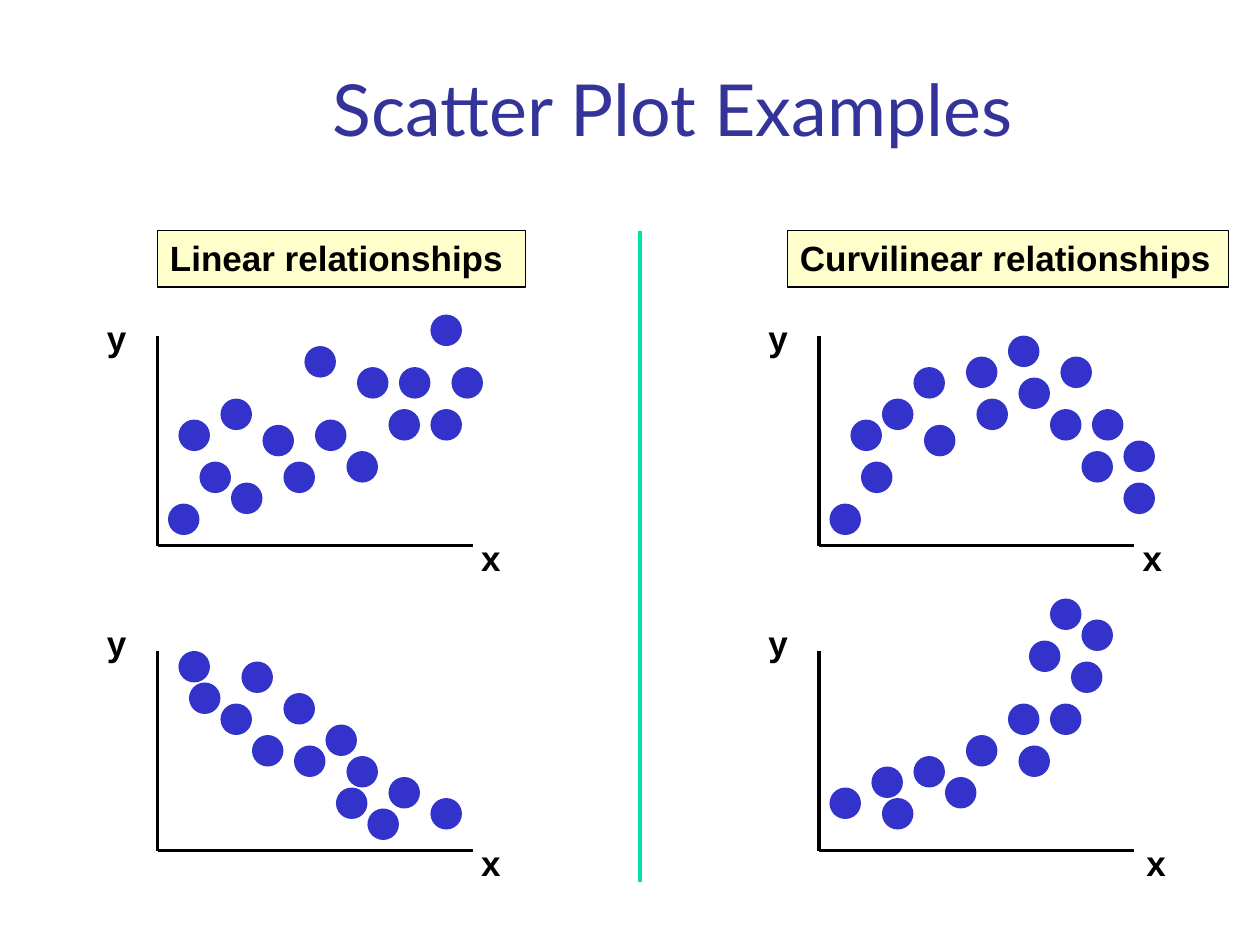
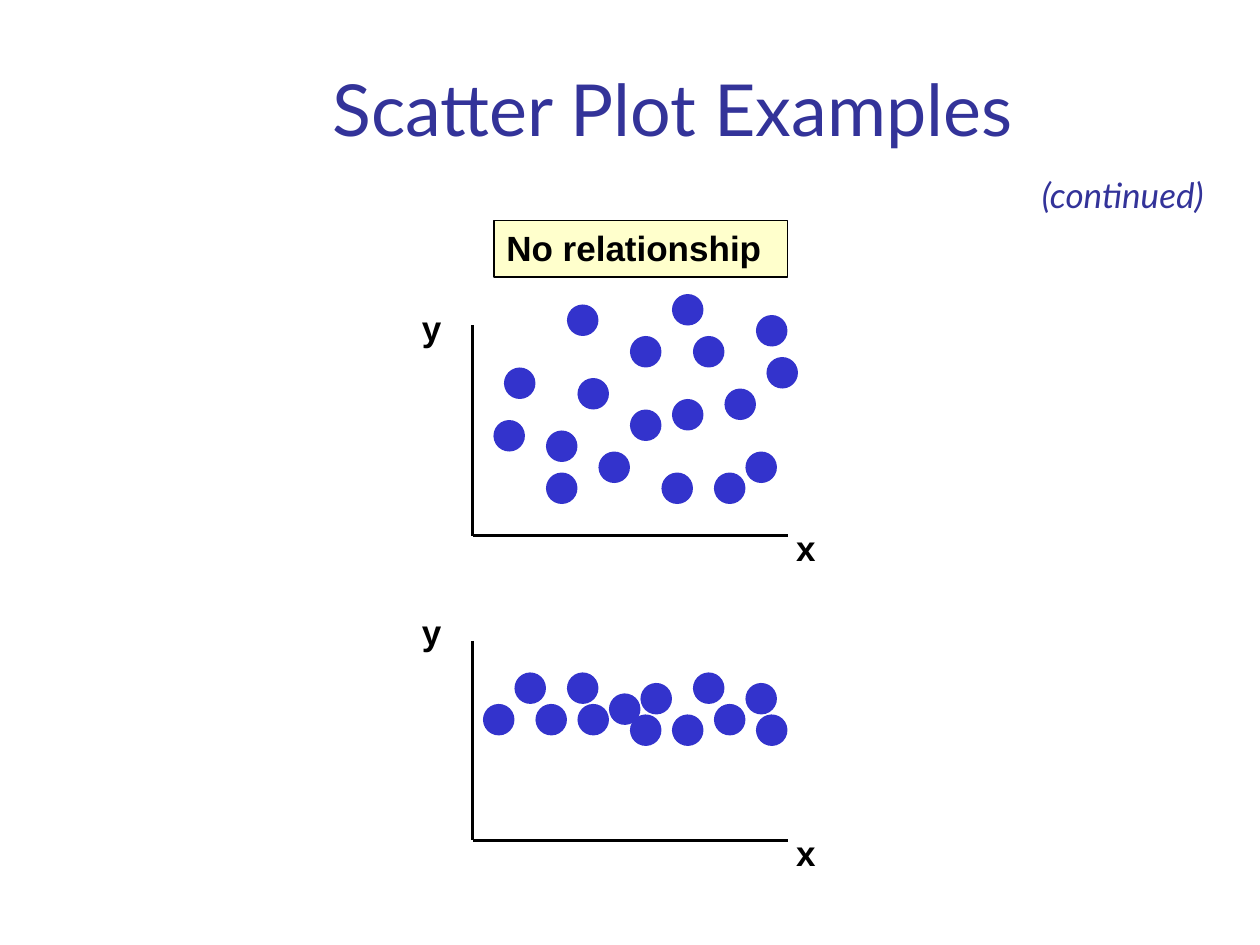
from dataclasses import dataclass

from lxml import etree
from pptx import Presentation
from pptx.dml.color import RGBColor
from pptx.enum import shapes, text
from pptx.oxml import ns
from pptx.util import Inches, Pt

# Shared colours, fonts and measures (inches)
NAVY = RGBColor(0x33, 0x33, 0x99)
DOT_BLUE = RGBColor(0x33, 0x33, 0xCC)
CREAM = RGBColor(0xFF, 0xFF, 0xCC)
GREEN = RGBColor(0x00, 0xE4, 0xA8)
BLACK = RGBColor(0, 0, 0)
HEADING_FONT = "Lato"
LABEL_FONT = "Arial"
GRID = 1 / 12
DOT_SIZE = 0.25
X_AXIS_LENGTH = 2.5
LABEL_HEIGHT = 0.43


@dataclass
class Plot:
    """Axes meet at (left, bottom); dots are grid steps right of and above it."""
    left: float
    bottom: float
    y_steps: int
    dots: list[tuple[float, float]]
    x_label_offset: float = 2.47


@dataclass
class Heading:
    caption: str
    left: float
    top: float
    width: float


def style_text(frame, font_name: str, size: float, color: RGBColor,
               bold: bool = False, italic: bool = False) -> None:
    for run in frame.paragraphs[0].runs:
        font = run.font
        font.name, font.size = font_name, Pt(size)
        font.bold, font.italic = bold, italic
        font.color.rgb = color


def add_title_slide(prs, title: str):
    slide = prs.slides.add_slide(prs.slide_layouts[5])
    heading = slide.shapes.title
    heading.left, heading.top = Inches(1.08), Inches(0.42)
    heading.width, heading.height = Inches(8.52), Inches(0.83)
    frame = heading.text_frame
    frame.text = title
    frame.auto_size = text.MSO_AUTO_SIZE.NONE
    frame.vertical_anchor = text.MSO_ANCHOR.BOTTOM
    frame.paragraphs[0].alignment = text.PP_ALIGN.CENTER
    style_text(frame, HEADING_FONT, 41, NAVY)
    return slide


def add_line(slide, start: tuple[float, float], end: tuple[float, float],
             color: RGBColor = BLACK, weight: float = 2) -> None:
    line = slide.shapes.add_connector(
        shapes.MSO_CONNECTOR.STRAIGHT, *map(Inches, start + end))
    line.line.color.rgb = color
    line.line.width = Pt(weight)
    etree.SubElement(line._element.spPr, ns.qn("a:effectLst"))


def add_label(slide, caption: str, left: float, top: float, width: float = 0.36):
    frame = slide.shapes.add_textbox(
        *map(Inches, (left, top, width, LABEL_HEIGHT))).text_frame
    frame.word_wrap = False
    frame.auto_size = text.MSO_AUTO_SIZE.SHAPE_TO_FIT_TEXT
    frame.text = caption
    style_text(frame, LABEL_FONT, 20, BLACK, bold=True)
    return frame


def add_dot(slide, left: float, top: float) -> None:
    dot = slide.shapes.add_shape(
        shapes.MSO_SHAPE.OVAL, *map(Inches, (left, top, DOT_SIZE, DOT_SIZE)))
    dot.shadow.inherit = False
    dot.rotation = 238.6
    dot.fill.solid()
    dot.fill.fore_color.rgb = DOT_BLUE
    dot.line.fill.background()


def add_plot(slide, plot: Plot) -> None:
    left, bottom = plot.left, plot.bottom
    add_line(slide, (left, bottom - plot.y_steps * GRID), (left, bottom))
    add_line(slide, (left, bottom), (left + X_AXIS_LENGTH, bottom))
    add_label(slide, "y", left - 0.5, bottom - 1.87)
    add_label(slide, "x", left + plot.x_label_offset, bottom - 0.12)
    for across, up in plot.dots:
        add_dot(slide, left + across * GRID, bottom - up * GRID)


def add_heading(slide, heading: Heading) -> None:
    box = slide.shapes.add_shape(
        shapes.MSO_SHAPE.RECTANGLE,
        *map(Inches, (heading.left, heading.top, heading.width, 0.45)))
    box.shadow.inherit = False
    box.fill.solid()
    box.fill.fore_color.rgb = CREAM
    box.line.color.rgb = BLACK
    box.line.width = Pt(1)
    frame = box.text_frame
    frame.text = heading.caption
    frame.word_wrap = True
    frame.auto_size = text.MSO_AUTO_SIZE.SHAPE_TO_FIT_TEXT
    frame.vertical_anchor = text.MSO_ANCHOR.TOP
    frame.paragraphs[0].alignment = text.PP_ALIGN.LEFT
    style_text(frame, LABEL_FONT, 20, BLACK, bold=True)


# Plots, upper one first in each pair
RISING = Plot(1.25, 4.33, 20, [
    (1, 4), (2, 12), (4, 8), (6, 14), (7, 6), (10, 11.5), (12, 8), (14, 19),
    (15, 12), (18, 9), (19, 17), (22, 13), (23, 17), (26, 13), (26, 22), (28, 17)])
FALLING = Plot(1.25, 6.75, 19, [
    (2, 19), (3, 16), (6, 14), (8, 18), (9, 11), (12, 15), (13, 10),
    (16, 12), (17, 6), (18, 9), (20, 4), (22, 7), (26, 5)])
ARCHED = Plot(6.5, 4.33, 20, [
    (1, 4), (3, 12), (4, 8), (6, 14), (9, 17), (10, 11.5), (14, 18), (15, 14),
    (18, 20), (19, 16), (22, 13), (23, 18), (25, 9), (26, 13), (29, 6), (29, 10)])
STEEPENING = Plot(6.5, 6.75, 19, [
    (1, 6), (5, 8), (6, 5), (9, 9), (12, 7), (14, 11), (18, 14),
    (19, 10), (20, 20), (22, 14), (22, 24), (24, 18), (25, 22)], 2.5)
SCATTERED = Plot(3.75, 4.25, 20, [
    (2, 11), (3, 16), (7, 6), (7, 10), (9, 22), (10, 15), (12, 8), (15, 12),
    (15, 19), (18, 6), (19, 13), (19, 23), (21, 19), (23, 6), (24, 14),
    (26, 8), (27, 21), (28, 17)])
FLAT = Plot(3.75, 6.67, 19, [
    (1, 13), (4, 16), (6, 13), (9, 16), (10, 13), (13, 14), (15, 12),
    (16, 15), (19, 12), (21, 16), (23, 13), (26, 15), (27, 12)])


def main() -> None:
    prs = Presentation()
    prs.slide_width, prs.slide_height = Inches(10), Inches(7.5)

    # Linear and curvilinear relationships
    related = add_title_slide(prs, "Scatter Plot Examples")
    for plot in (FALLING, RISING, STEEPENING, ARCHED):
        add_plot(related, plot)
    add_heading(related, Heading("Linear relationships", 1.25, 1.83, 2.92))
    add_heading(related, Heading("Curvilinear relationships", 6.25, 1.83, 3.5))
    add_line(related, (5.08, 1.83), (5.08, 7.0), GREEN, 2.25)

    # No relationship
    unrelated = add_title_slide(prs, "Scatter Plot Examples")
    for plot in (FLAT, SCATTERED):
        add_plot(unrelated, plot)
    add_heading(unrelated, Heading("No relationship", 3.92, 1.75, 2.33))
    continued = add_label(unrelated, "(continued)", 8.17, 1.33, 1.61)
    style_text(continued, HEADING_FONT, 20, NAVY, italic=True)

    prs.save("out.pptx")


if __name__ == "__main__":
    main()
